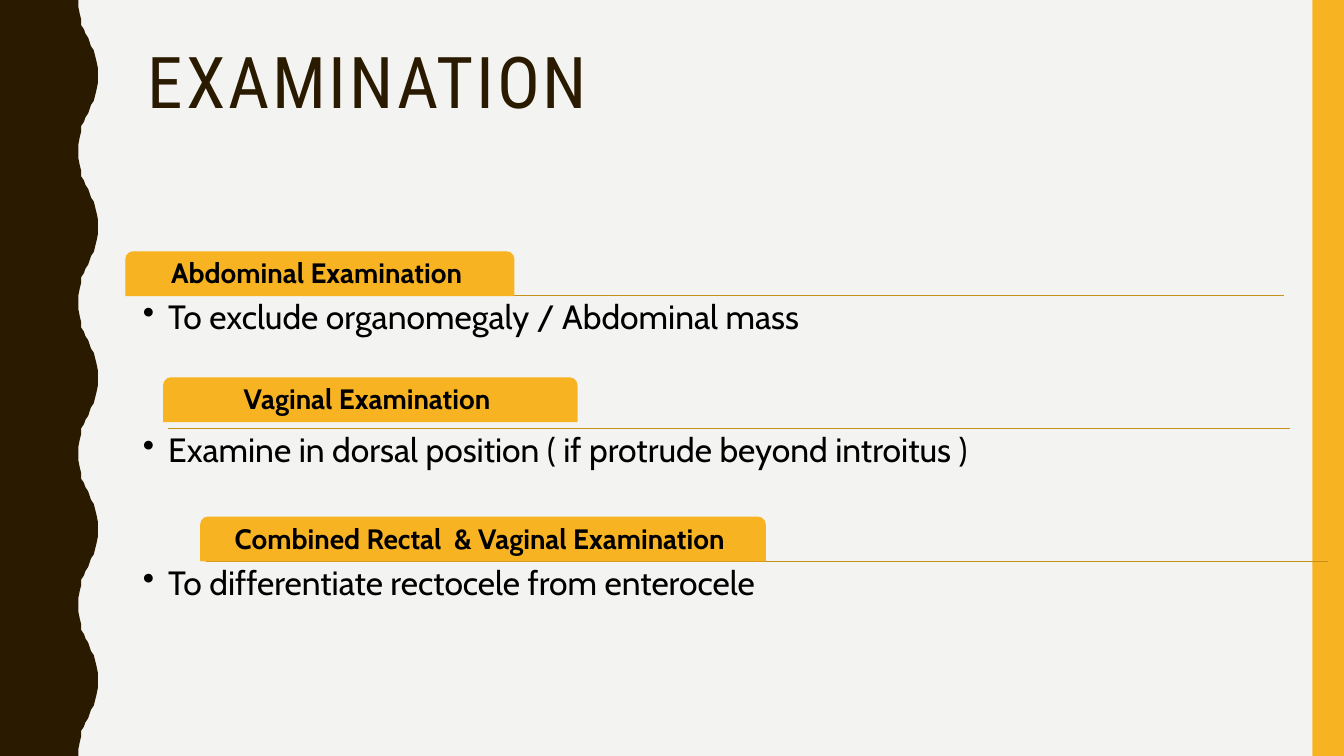
import pptx
import pptx.util
import pptx.dml.color
import pptx.enum.shapes
import pptx.enum.text
import pptx.oxml.ns
from lxml import etree

Pt = pptx.util.Pt
SHAPES = pptx.enum.shapes.MSO_SHAPE
ANCHOR = pptx.enum.text.MSO_ANCHOR
ALIGN = pptx.enum.text.PP_ALIGN
qn = pptx.oxml.ns.qn

COLORS = {"paper": "F3F3F2", "brown": "2A1A00", "amber": "F8B323",
          "rule": "C78F1C", "text": "000000"}
WIDTH, HEIGHT = 960, 540


def paint(fill, color):
    fill.solid()
    fill.fore_color.rgb = pptx.dml.color.RGBColor.from_string(COLORS[color])


def write(frame, text, font, size, color, align, inset):
    frame.text = text
    frame.word_wrap = True
    frame.auto_size = pptx.enum.text.MSO_AUTO_SIZE.NONE
    frame.margin_left = frame.margin_right = Pt(inset[0])
    frame.margin_top = frame.margin_bottom = Pt(inset[1])
    paragraph = frame.paragraphs[0]
    paragraph.alignment = align
    paragraph.line_spacing = 0.9
    run = paragraph.runs[0]
    run.font.name = font
    run.font.size = Pt(size)
    paint(run.font.fill, color)
    return paragraph


deck = pptx.Presentation()
deck.slide_width, deck.slide_height = Pt(WIDTH), Pt(HEIGHT)
slide = deck.slides.add_slide(deck.slide_layouts[5])
paint(slide.background.fill, "paper")

# Wavy left edge: half a wave, mirrored and repeated down the slide
half_wave = [(56, 0), (56.3, 5), (56.8, 10), (57.6, 14.4), (58.5, 18),
             (59.8, 21), (61.2, 24), (62.6, 27), (64, 30), (65.4, 33),
             (66.8, 36), (68.3, 39.6), (69.2, 44), (69.8, 49), (70, 54)]
period = 108
wave = half_wave + [(x, period - y) for x, y in reversed(half_wave[:-1])]
edge = [(x, y + period * turn) for turn in range(HEIGHT // period) for x, y in wave]
builder = slide.shapes.build_freeform(0, 0, scale=Pt(1))
builder.add_line_segments(edge + [(0, HEIGHT)], close=True)
wavy_edge = builder.convert_to_shape()

# Amber bar on the right
amber_bar = slide.shapes.add_shape(SHAPES.RECTANGLE, Pt(937.5), 0, Pt(22.5), Pt(HEIGHT))
for band, color in ((wavy_edge, "brown"), (amber_bar, "amber")):
    band.shadow.inherit = False
    paint(band.fill, color)
    band.line.fill.background()

# Title
title = slide.shapes.title
title.left, title.top, title.width, title.height = Pt(98.5), Pt(30), Pt(801.5), Pt(117.5)
heading = write(title.text_frame, "EXAMINATION", "Roboto Condensed", 51, "brown",
                ALIGN.LEFT, (7.2, 3.6))
title.text_frame.vertical_anchor = ANCHOR.TOP
heading.runs[0].font._element.set("spc", "200")

# Examinations: label, finding, tab left, tab top, tab width, rule left
examinations = [
    ("Abdominal Examination ", "To exclude organomegaly / Abdominal mass",
     90, 180, 277, 116),
    ("Vaginal Examination ", "Examine in dorsal position ( if protrude beyond introitus )",
     117, 270, 295, 120),
    ("Combined Rectal  & Vaginal Examination ", "To differentiate rectocele from enterocele",
     143.5, 369.5, 403, 147),
]
for row, (label, finding, tab_left, tab_top, tab_width, rule_left) in enumerate(examinations):
    rule_y = 211 + 95 * row

    # Rule
    rule = slide.shapes.add_connector(pptx.enum.shapes.MSO_CONNECTOR.STRAIGHT, Pt(rule_left),
                                      Pt(rule_y), Pt(rule_left + 801.5), Pt(rule_y))
    paint(rule.line.fill, "rule")
    rule.line.width = Pt(1)
    etree.SubElement(rule._element.spPr, qn("a:effectLst"))

    # Tab
    tab = slide.shapes.add_shape(SHAPES.ROUND_2_SAME_RECTANGLE, Pt(tab_left), Pt(tab_top),
                                 Pt(tab_width), Pt(31))
    tab.shadow.inherit = False
    tab.adjustments[0] = 0.167
    paint(tab.fill, "amber")
    paint(tab.line.fill, "amber")
    tab.line.width = Pt(1)
    tab_label = write(tab.text_frame, label, "Cabin", 20, "text", ALIGN.CENTER, (3, 3))
    tab_label.runs[0].font.bold = True
    tab.text_frame.vertical_anchor = ANCHOR.MIDDLE

    # Bulleted finding
    note = slide.shapes.add_textbox(Pt(98.5), Pt(rule_y), Pt(801.5), Pt(62))
    bullet_line = write(note.text_frame, finding, "Cabin", 24, "text", ALIGN.LEFT, (3.6, 3.6))
    properties = bullet_line._p.get_or_add_pPr()
    properties.set("marL", str(Pt(18)))
    properties.set("indent", str(-Pt(18)))
    etree.SubElement(properties, qn("a:buChar")).set("char", "•")

deck.save("out.pptx")
